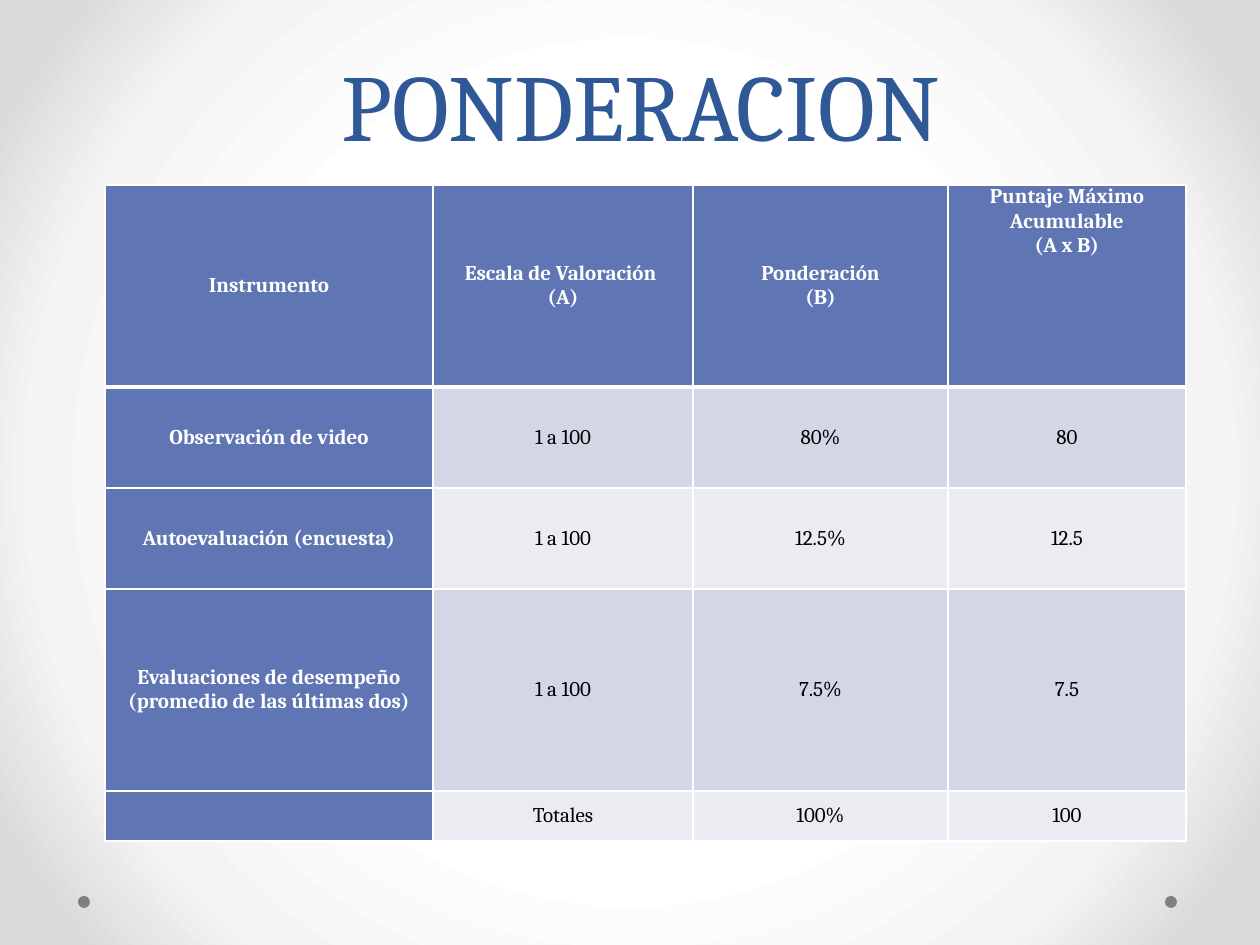
from dataclasses import dataclass

from pptx import Presentation
from pptx import oxml
from pptx import util as u
from pptx.dml.color import RGBColor
from pptx.enum import shapes, text
from pptx.oxml import ns


@dataclass(frozen=True)
class Theme:
    """Colours, font and type sizes of the slide."""
    font: str = "Cambria"
    title: str = "2F5897"
    header: str = "6076B4"
    bands: tuple = ("D2D6E5", "EAECF2")
    light: str = "FFFFFF"
    dark: str = "000000"
    dot: str = "808080"
    backdrop: tuple = ((50, "FFFFFF"), (76, "F4F4F4"), (92, "DADADA"))
    title_size: int = 54
    title_spacing: int = 58
    cell_size: int = 12
    thin: int = 1
    thick: int = 3


THEME = Theme()
SCALE = u.Inches(1) / 126
COLUMNS = (328, 260, 255, 238)
ROWS = (202, 101, 101, 202, 50)
CONTENT = (
    ("Instrumento", "Escala de Valoración \n(A)", "Ponderación\n(B)",
     "Puntaje Máximo Acumulable\n(A x B)"),
    ("Observación de video", "1 a 100", "80%", "80"),
    ("Autoevaluación (encuesta)", "1 a 100", "12.5%", "12.5"),
    ("Evaluaciones de desempeño (promedio de las últimas dos)", "1 a 100", "7.5%", "7.5"),
    ("", "Totales", "100%", "100"),
)


def px(length):
    """Turn a length in px into EMU."""
    return u.Emu(round(length * SCALE))


def set_values(target, values):
    """Set attributes of an object from a dict."""
    for name, value in values.items():
        setattr(target, name, value)


def format_paragraph(paragraph, size, color, bold=False):
    """Centre a paragraph and set its type."""
    paragraph.alignment = text.PP_ALIGN.CENTER
    set_values(paragraph.font, {"name": THEME.font, "size": u.Pt(size), "bold": bold})
    paragraph.font.color.rgb = RGBColor.from_string(color)
    for run in paragraph.runs:
        set_values(run.font, {"name": THEME.font, "size": u.Pt(size), "bold": bold})
        run.font.color.rgb = RGBColor.from_string(color)


def paint_background(slide):
    """Fill the background with a circular gradient."""
    slide.background.fill.gradient()
    gradient = next(slide.element.iter(ns.qn("a:gradFill")))
    stops = "".join(f'<a:gs pos="{position * 1000}"><a:srgbClr val="{color}"/></a:gs>'
                    for position, color in THEME.backdrop)
    circle = oxml.parse_xml(
        f'<a:gradFill {ns.nsdecls("a")} rotWithShape="1"><a:gsLst>{stops}</a:gsLst>'
        '<a:path path="circle"><a:fillToRect l="50000" t="50000" r="50000" b="50000"/>'
        '</a:path></a:gradFill>')
    gradient.getparent().replace(gradient, circle)


def add_dot(slide, left, top, size):
    """Add a round ornament."""
    dot = slide.shapes.add_shape(shapes.MSO_SHAPE.OVAL, px(left), px(top), px(size), px(size))
    dot.shadow.inherit = False
    dot.fill.solid()
    dot.fill.fore_color.rgb = RGBColor.from_string(THEME.dot)
    dot.line.fill.background()


def set_title(slide, words):
    """Place and format the title placeholder."""
    title = slide.shapes.title
    set_values(title, {"left": px(74), "top": px(-53), "width": px(1134), "height": px(220)})
    title.text_frame.text = words
    title.text_frame.vertical_anchor = text.MSO_ANCHOR.BOTTOM
    paragraph = title.text_frame.paragraphs[0]
    paragraph.line_spacing = u.Pt(THEME.title_spacing)
    format_paragraph(paragraph, THEME.title_size, THEME.title)


def set_borders(cell, widths):
    """Draw the left, right, top and bottom borders of a cell."""
    properties = cell._tc.get_or_add_tcPr()
    for index, (side, width) in enumerate(zip("LRTB", widths)):
        properties.insert(index, oxml.parse_xml(
            f'<a:ln{side} {ns.nsdecls("a")} w="{u.Pt(width)}"><a:solidFill>'
            f'<a:srgbClr val="{THEME.light}"/></a:solidFill></a:ln{side}>'))


def format_cell(cell, row, column):
    """Style a cell by its place in the table."""
    is_label = row == 0 or column == 0
    is_last_header = row == 0 and column == len(COLUMNS) - 1
    fill = THEME.header if is_label else THEME.bands[(row - 1) % 2]
    anchor = text.MSO_ANCHOR.TOP if is_last_header else text.MSO_ANCHOR.MIDDLE
    set_values(cell, {"margin_left": px(9), "margin_right": px(9), "margin_top": 0,
                      "margin_bottom": 0, "vertical_anchor": anchor})
    cell.fill.solid()
    cell.fill.fore_color.rgb = RGBColor.from_string(fill)
    set_borders(cell, (THEME.thin, THEME.thin,
                       THEME.thick if row == 1 else THEME.thin,
                       THEME.thick if row == 0 else THEME.thin))
    for paragraph in cell.text_frame.paragraphs:
        format_paragraph(paragraph, THEME.cell_size,
                         THEME.light if is_label else THEME.dark, is_label)


def add_weights_table(slide, left, top):
    """Add the table of instruments and weights."""
    table = slide.shapes.add_table(len(ROWS), len(COLUMNS), px(left), px(top),
                                   px(sum(COLUMNS)), px(sum(ROWS))).table
    for column, width in zip(table.columns, COLUMNS):
        column.width = px(width)
    for row, height in zip(table.rows, ROWS):
        row.height = px(height)
    for row, entries in enumerate(CONTENT):
        for column, entry in enumerate(entries):
            cell = table.cell(row, column)
            cell.text = entry
            format_cell(cell, row, column)


def main():
    """Build and save the presentation."""
    presentation = Presentation()
    set_values(presentation, {"slide_width": px(1260), "slide_height": px(945)})
    slide = presentation.slides.add_slide(presentation.slide_layouts[5])
    paint_background(slide)
    for left in (1165, 78):
        add_dot(slide, left, 896, 12)
    set_title(slide, "PONDERACION")
    add_weights_table(slide, 105, 185)
    presentation.save("out.pptx")


if __name__ == "__main__":
    main()
